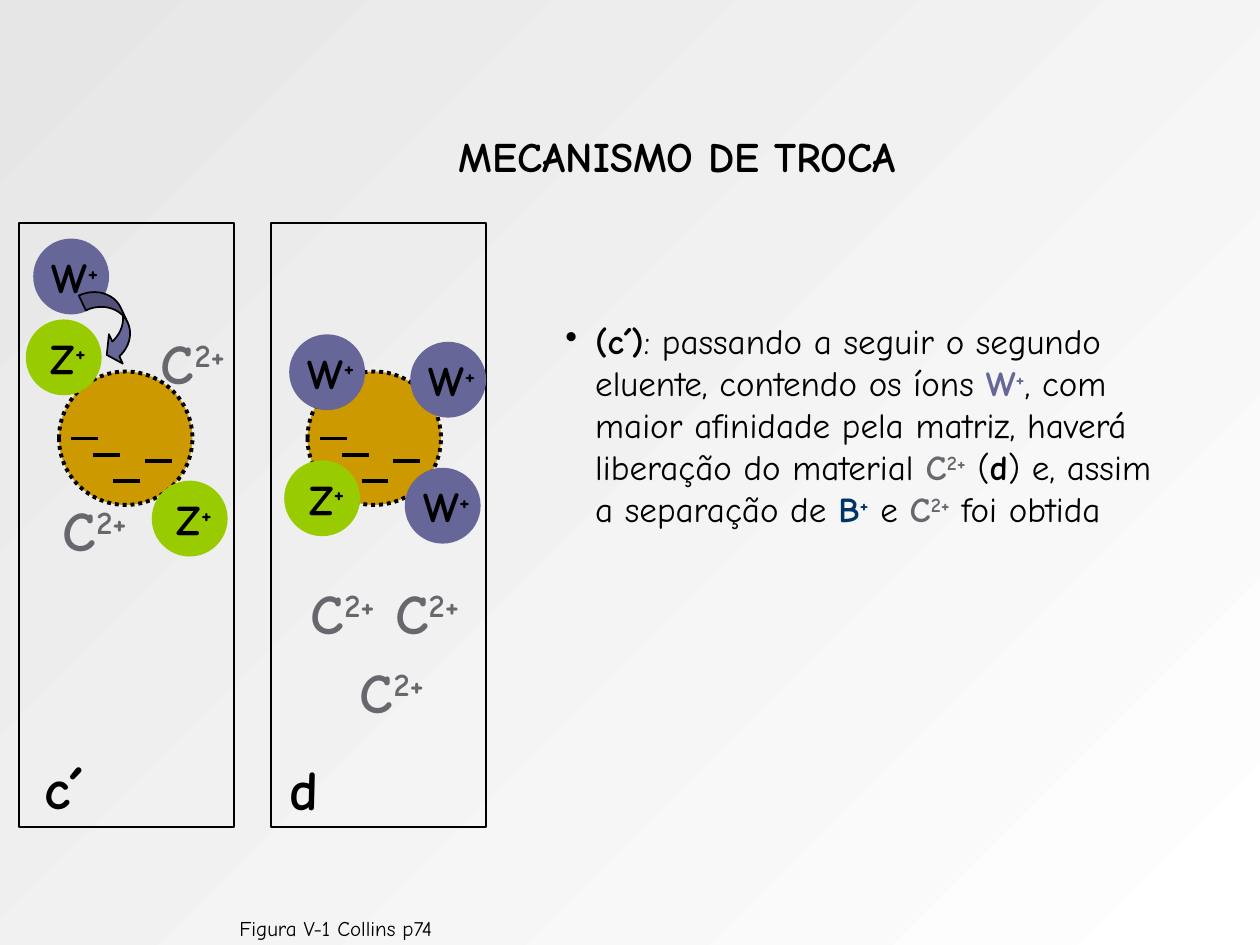
from lxml import etree
from pptx import Presentation
from pptx.dml.color import RGBColor
from pptx.enum.dml import MSO_LINE
from pptx.enum.shapes import MSO_CONNECTOR, MSO_SHAPE
from pptx.enum.text import MSO_ANCHOR, PP_ALIGN
from pptx.oxml.ns import qn
from pptx.util import Cm, Pt

FONT = "Comic Neue"
COLORS = {
    "black": "000000", "white": "FFFFFF", "silver": "E6E6E6",
    "violet": "666699", "green": "99CC00", "gold": "CC9900",
    "gray": "69676D", "navy": "003366",
}

TITLE = "MECANISMO DE TROCA"
CAPTION = "Figura V-1 Collins p74"

# Runs: (text, color, bold, superscript)
BODY = [
    ("(c´)", "black", True, False),
    (": passando a seguir o segundo eluente, contendo os íons ", "black", False, False),
    ("W", "violet", True, False),
    ("+", "violet", True, True),
    (", com maior afinidade pela matriz, haverá liberação do material ", "black", False, False),
    ("C", "gray", True, False),
    ("2+", "gray", True, True),
    (" (", "black", False, False),
    ("d", "black", True, False),
    (") e, assim a separação de ", "black", False, False),
    ("B", "navy", True, False),
    ("+", "navy", True, True),
    (" e ", "black", False, False),
    ("C", "gray", True, False),
    ("2+", "gray", True, True),
    (" foi obtida", "black", False, False),
]

# Positions and sizes in cm
COLUMNS = [  # column left, matrix left, label, label top, label width
    (0.38, 1.19, "c´", 15.06, 1.8),
    (5.46, 6.2, "d", 15.09, 1.35),
]
COLUMN_TOP, COLUMN_W, COLUMN_H = 4.5, 4.34, 12.17
MATRIX_TOP, MATRIX_D = 7.49, 2.69
CHARGES = [(1.73, 1.8), (1.09, 2.21), (0.69, 1.68), (0.25, 1.35)]
CHARGE_W = 0.54
ION_D = 1.45
ION_STYLES = {  # color, label offset, label width
    "W": ("violet", -0.07, 1.75),
    "Z": ("green", 0.06, 1.52),
}
IONS = [
    ("W", 0.71, 4.85), ("Z", 0.56, 6.48), ("Z", 3.1, 9.73),
    ("W", 5.87, 6.78), ("W", 8.2, 9.47), ("W", 8.31, 6.93), ("Z", 5.77, 9.32),
]
FREE_IONS = [(0.74, 9.86), (2.72, 6.5), (5.74, 11.53), (7.44, 11.53), (6.73, 13.13)]


def rgb(name):
    return RGBColor.from_string(COLORS[name])


def write(p, runs, size):
    for text, color, bold, sup in runs:
        r = p.add_run()
        r.text = text
        r.font.name = FONT
        r.font.size = Pt(size)
        r.font.bold = bold
        r.font.color.rgb = rgb(color)
        if sup:
            r._r.get_or_add_rPr().set("baseline", "30000")


def add_text(shapes, box, runs, size, align=PP_ALIGN.CENTER):
    tf = shapes.add_textbox(*map(Cm, box)).text_frame
    tf.word_wrap = True
    p = tf.paragraphs[0]
    p.alignment = align
    write(p, runs, size)
    return tf


def add_shape(shapes, kind, box, fill, line, width):
    sp = shapes.add_shape(kind, *map(Cm, box))
    sp.shadow.inherit = False
    if fill:
        sp.fill.solid()
        sp.fill.fore_color.rgb = rgb(fill)
    else:
        sp.fill.background()
    sp.line.color.rgb = rgb(line)
    sp.line.width = Pt(width)
    return sp


def add_charge(shapes, x, y):
    line = shapes.add_connector(MSO_CONNECTOR.STRAIGHT, Cm(x), Cm(y), Cm(x + CHARGE_W), Cm(y))
    line.line.color.rgb = rgb("black")
    line.line.width = Pt(2.25)
    etree.SubElement(line._element.spPr, qn("a:effectLst"))


def add_matrix(s, left):
    shapes = s.shapes.add_group_shape().shapes
    bead = add_shape(shapes, MSO_SHAPE.OVAL, (left, MATRIX_TOP, MATRIX_D, MATRIX_D),
                     "gold", "black", 2.25)
    bead.line.dash_style = MSO_LINE.ROUND_DOT
    for dx, dy in CHARGES:
        add_charge(shapes, left + dx, MATRIX_TOP + dy)


def add_ion(s, symbol, left, top):
    color, dx, width = ION_STYLES[symbol]
    shapes = s.shapes.add_group_shape().shapes
    add_shape(shapes, MSO_SHAPE.OVAL, (left, top, ION_D, ION_D), color, color, 2.25)
    add_text(shapes, (left + dx, top + 0.1, width, 1.27),
             [(symbol, "black", True, False), ("+", "black", True, True)], 24)


def add_bullet(p, indent):
    pPr = p._p.get_or_add_pPr()
    pPr.set("marL", str(Cm(indent)))
    pPr.set("indent", str(-Cm(indent)))
    etree.SubElement(pPr, qn("a:buChar")).set("char", "•")


def main():
    prs = Presentation()
    prs.slide_width, prs.slide_height = Cm(25.4), Cm(19.05)
    s = prs.slides.add_slide(prs.slide_layouts[5])

    bg = s.background.fill
    bg.gradient()
    bg.gradient_angle = 135
    for stop, color in zip(bg.gradient_stops, ("white", "silver")):
        stop.color.rgb = rgb(color)

    title = s.shapes.title
    title.left, title.top, title.width, title.height = map(Cm, (1.9, 1.42, 23.5, 3.45))
    title.text_frame.vertical_anchor = MSO_ANCHOR.MIDDLE
    p = title.text_frame.paragraphs[0]
    p.alignment = PP_ALIGN.CENTER
    write(p, [(TITLE, "black", True, False)], 24)

    tf = add_text(s.shapes, (1.65, 18.46, 10.24, 0.51), [(CAPTION, "black", False, False)], 12)
    tf.margin_left = tf.margin_right = tf.margin_top = tf.margin_bottom = 0

    for left, matrix_left, label, label_top, label_w in COLUMNS:
        add_shape(s.shapes, MSO_SHAPE.RECTANGLE, (left, COLUMN_TOP, COLUMN_W, COLUMN_H),
                  None, "black", 1)
        add_matrix(s, matrix_left)
        add_text(s.shapes, (left, label_top, label_w, 1.6), [(label, "black", True, False)], 32)

    for left, top in FREE_IONS:
        add_text(s.shapes, (left, top, 2.34, 1.6),
                 [("C", "gray", True, False), ("2+", "gray", True, True)], 32)
    for ion in IONS:
        add_ion(s, *ion)

    arrow = add_shape(s.shapes, MSO_SHAPE.CURVED_LEFT_ARROW, (1.91, 5.74, 0.66, 1.65),
                      "violet", "black", 1)
    arrow.rotation = 334.8
    for i, value in enumerate((0.5, 0.99, 0.33)):
        arrow.adjustments[i] = value

    tf = add_text(s.shapes, (11.15, 6.32, 12.73, 4.5), BODY, 20, PP_ALIGN.LEFT)
    add_bullet(tf.paragraphs[0], 0.6)

    prs.save("out.pptx")


if __name__ == "__main__":
    main()
